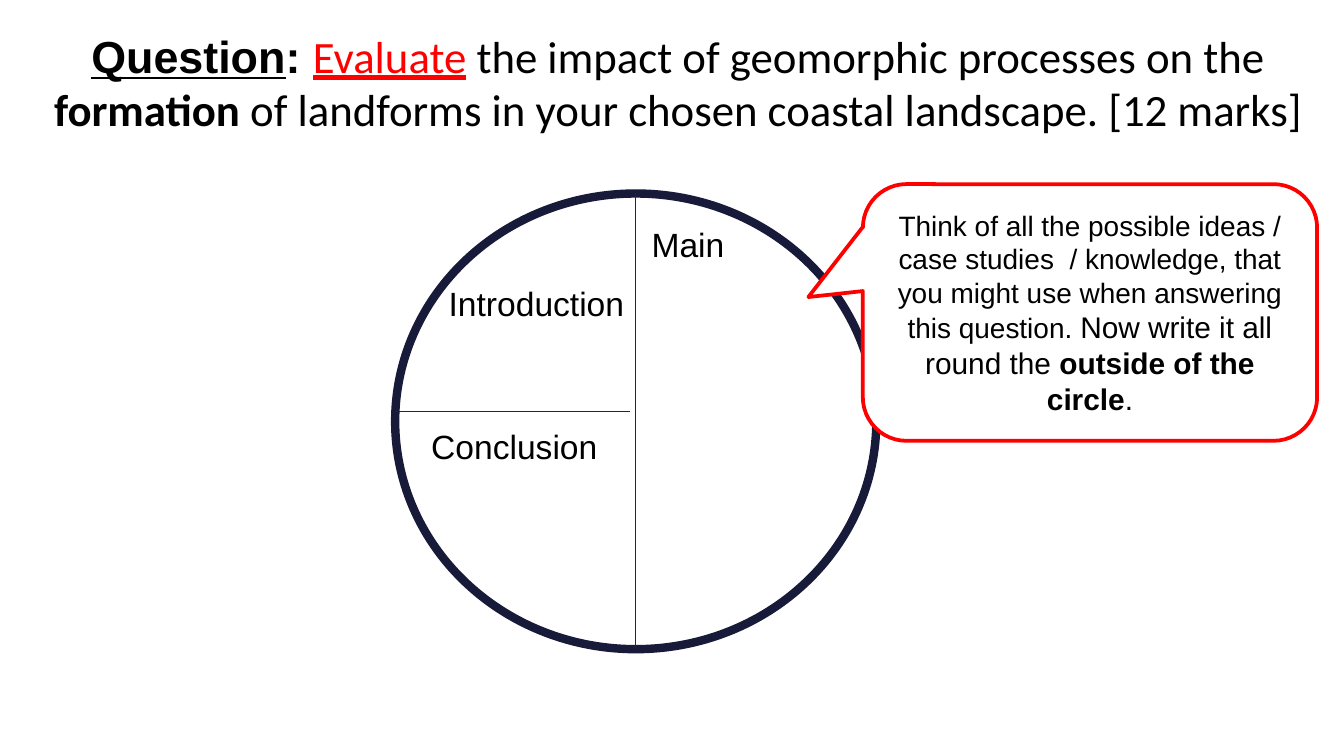
from lxml import etree
from pptx import Presentation
from pptx.dml.color import RGBColor
from pptx.enum.shapes import MSO_CONNECTOR as Connector, MSO_SHAPE as Shape
from pptx.enum.text import MSO_ANCHOR as Anchor, MSO_AUTO_SIZE as AutoSize, PP_ALIGN as Align
from pptx.oxml.ns import qn
from pptx.util import Inches, Pt

BLACK = RGBColor(0x00, 0x00, 0x00)
WHITE = RGBColor(0xFF, 0xFF, 0xFF)
RED = RGBColor(0xFF, 0x00, 0x00)
NAVY = RGBColor(0x18, 0x1A, 0x39)
DIVIDER = RGBColor(0x1E, 0x21, 0x4C)

presentation = Presentation()
presentation.slide_width = Inches(10)
presentation.slide_height = Inches(10 * 9 / 16)
slide = presentation.slides.add_slide(presentation.slide_layouts[6])


def add_runs(paragraph, runs, base):
    for text, changes in runs:
        run = paragraph.add_run()
        run.text = text
        formats = {"name": "Arial", **base, **changes}
        run.font.color.rgb = formats.pop("color", BLACK)
        for name, value in formats.items():
            setattr(run.font, name, value)


def add_outlined(kind, box, color, width):
    shape = slide.shapes.add_shape(kind, *map(Inches, box))
    shape.shadow.inherit = False
    shape.fill.solid()
    shape.fill.fore_color.rgb = WHITE
    shape.line.color.rgb = color
    shape.line.width = Pt(width)
    return shape


left, top, width, height = 2.94, 1.44, 3.58, 3.39
center = left + width / 2
add_outlined(Shape.OVAL, (left, top, width, height), NAVY, 4.5)

for ends in [(center, top, center, top + height), (left, 3.06, 4.69, 3.06)]:
    divider = slide.shapes.add_connector(Connector.STRAIGHT, *map(Inches, ends))
    divider.line.color.rgb = DIVIDER
    divider.line.width = Pt(0.75)
    etree.SubElement(divider._element.spPr, qn("a:effectLst"))

labels = [
    ("Introduction", 3.24, 2.06, 1.53),
    ("Main", 4.75, 1.62, 0.91),
    ("Conclusion", 3.11, 3.12, 1.51),
]
for text, label_left, label_top, label_width in labels:
    label = slide.shapes.add_textbox(*map(Inches, (label_left, label_top, label_width, 0.4)))
    label.text_frame.word_wrap = True
    label.text_frame.auto_size = AutoSize.SHAPE_TO_FIT_TEXT
    add_runs(label.text_frame.paragraphs[0], [(text, {})], {"size": Pt(18)})

callout = add_outlined(Shape.ROUNDED_RECTANGULAR_CALLOUT, (6.42, 1.37, 3.38, 1.91), RED, 2)
for index, value in enumerate((-0.62, -0.06, 0.17)):
    callout.adjustments[index] = value
callout.text_frame.word_wrap = True
callout.text_frame.vertical_anchor = Anchor.MIDDLE
paragraph = callout.text_frame.paragraphs[0]
paragraph.alignment = Align.CENTER
callout_runs = [
    (
        "Think of all the possible ideas / case studies  / knowledge, "
        "that you might use when answering this question. ",
        {"size": Pt(15)},
    ),
    ("Now write it all round the ", {}),
    ("outside of the circle", {"bold": True}),
    (".", {}),
]
add_runs(paragraph, callout_runs, {"size": Pt(16)})

question = slide.shapes.add_textbox(*map(Inches, (0.28, 0.14, 9.53, 0.94)))
frame_formats = {
    "word_wrap": True,
    "vertical_anchor": Anchor.MIDDLE,
    "margin_left": Inches(0.07),
    "margin_right": Inches(0.07),
    "margin_top": Inches(0.04),
    "margin_bottom": Inches(0.04),
}
for name, value in frame_formats.items():
    setattr(question.text_frame, name, value)
paragraph = question.text_frame.paragraphs[0]
paragraph.alignment = Align.CENTER
question_runs = [
    ("Question", {"name": "Arial", "bold": True, "underline": True}),
    (": ", {"name": "Arial", "bold": True}),
    ("Evaluate", {"color": RED, "underline": True}),
    (" the impact of geomorphic processes on the ", {}),
    ("formation", {"bold": True}),
    (" of landforms in your chosen coastal landscape. [12 marks]", {}),
]
add_runs(paragraph, question_runs, {"name": "Calibri", "size": Pt(24)})

presentation.save("out.pptx")
